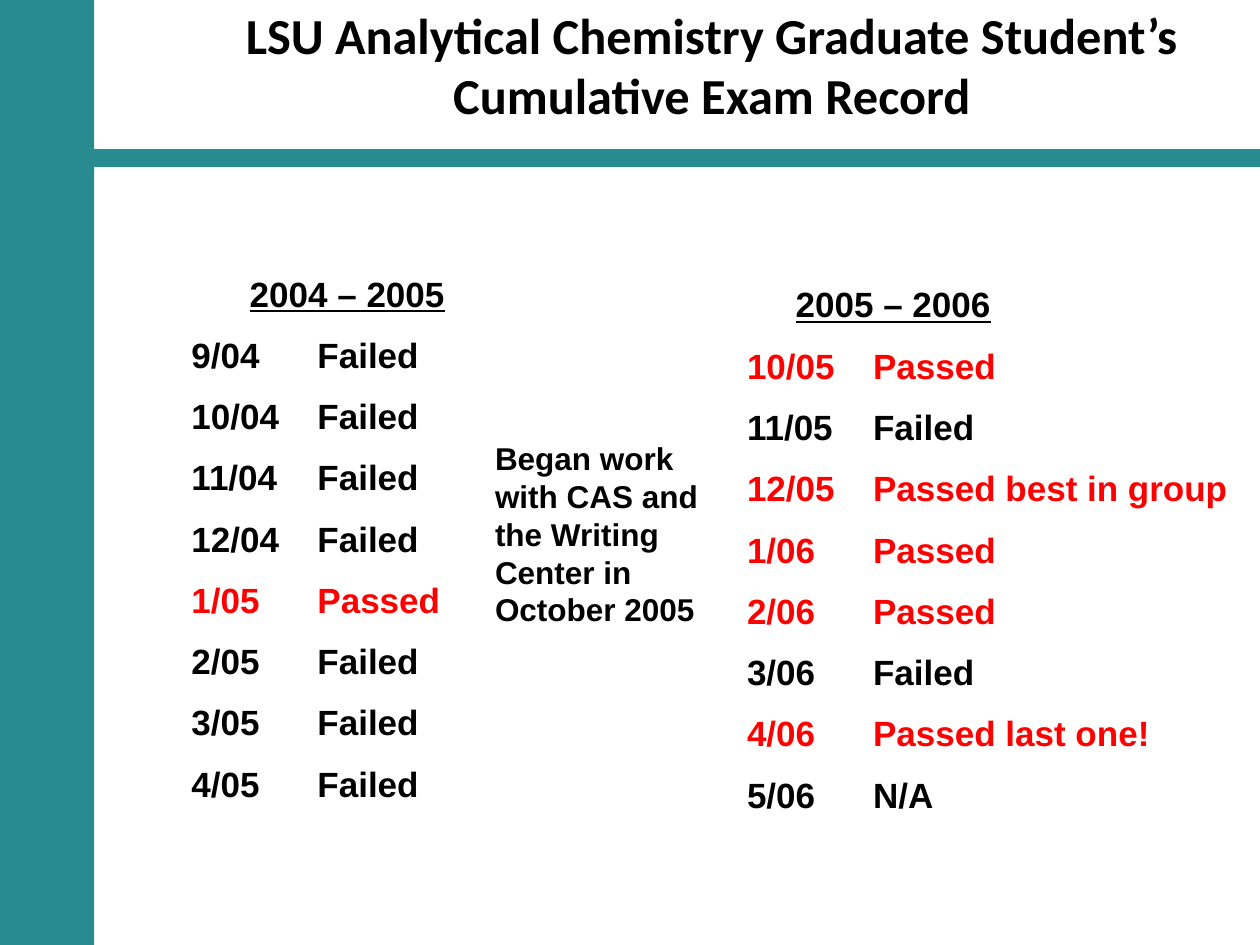
from dataclasses import dataclass
from typing import Optional

from lxml.etree import SubElement
from pptx import Presentation
from pptx.dml.color import RGBColor
from pptx.enum.shapes import MSO_CONNECTOR, MSO_SHAPE
from pptx.enum.text import MSO_ANCHOR, MSO_AUTO_SIZE, PP_ALIGN
from pptx.oxml.ns import qn
from pptx.util import Cm, Pt

TEAL, BLACK, RED = "288B90", "000000", "FF0000"
SLIDE_WIDTH, SLIDE_HEIGHT = Cm(25.4), Cm(19.05)


@dataclass
class Box:
    left: float
    top: float
    width: float
    height: float

    def lengths(self) -> tuple:
        return Cm(self.left), Cm(self.top), Cm(self.width), Cm(self.height)


@dataclass
class ExamYear:
    box: Box
    heading: str
    results: list[tuple[str, str]]
    heading_indent: Optional[float] = None  # centred when not given


EXAM_YEARS = [
    ExamYear(Box(3.61, 5.36, 6.78, 12.52), "2004 – 2005", [
        ("9/04", "Failed"), ("10/04", "Failed"), ("11/04", "Failed"),
        ("12/04", "Failed"), ("1/05", "Passed"), ("2/05", "Failed"),
        ("3/05", "Failed"), ("4/05", "Failed"),
    ]),
    ExamYear(Box(14.81, 5.58, 10.59, 12.52), "2005 – 2006", [
        ("10/05", "Passed"), ("11/05", "Failed"),
        ("12/05", "Passed best in group"), ("1/06", "Passed"),
        ("2/06", "Passed"), ("3/06", "Failed"),
        ("4/06", "Passed last one!"), ("5/06", "N/A"),
    ], heading_indent=0.98),
]


def color(value: str) -> RGBColor:
    return RGBColor.from_string(value)


def add_run(paragraph, text: str, size: float, font_name: str = "Arial",
            font_color: str = BLACK, underline: bool = False) -> None:
    run = paragraph.add_run()
    run.text = text
    font = run.font
    font.name, font.size, font.bold = font_name, Pt(size), True
    font.underline = underline
    font.color.rgb = color(font_color)


def add_text_frame(slide, box: Box):
    text_frame = slide.shapes.add_textbox(*box.lengths()).text_frame
    text_frame.word_wrap = True
    return text_frame


def add_tab_stop(paragraph, position: float) -> None:
    tab_list = SubElement(paragraph._p.get_or_add_pPr(), qn("a:tabLst"))
    SubElement(tab_list, qn("a:tab"), pos=str(Cm(position)), algn="l")


def add_title(slide, text: str) -> None:
    title = slide.shapes.title
    title.left, title.top, title.width, title.height = Box(3.56, 0.08, 21.59, 3.61).lengths()
    text_frame = title.text_frame
    text_frame.auto_size = MSO_AUTO_SIZE.NONE
    text_frame.vertical_anchor = MSO_ANCHOR.TOP
    text_frame.margin_top = 0
    paragraph = text_frame.paragraphs[0]
    paragraph.alignment = PP_ALIGN.CENTER
    add_run(paragraph, text, 28.8, "Calibri")


def add_exam_year(slide, year: ExamYear) -> None:
    text_frame = add_text_frame(slide, year.box)
    heading = text_frame.paragraphs[0]
    if year.heading_indent is None:
        heading.alignment = PP_ALIGN.CENTER
    else:
        heading._p.get_or_add_pPr().set("marL", str(Cm(year.heading_indent)))
    add_run(heading, year.heading, 20, underline=True)
    for date, result in year.results:
        paragraph = text_frame.add_paragraph()
        paragraph.space_before = Pt(11)
        add_tab_stop(paragraph, 2.54)
        result_color = RED if result.startswith("Passed") else BLACK
        add_run(paragraph, f"{date}\t{result}", 20, font_color=result_color)


def add_frame(slide) -> None:
    """Draw the rule under the title and the bar down the left side."""
    rule = slide.shapes.add_connector(MSO_CONNECTOR.STRAIGHT, 0, Cm(3.18), SLIDE_WIDTH, Cm(3.18))
    rule.line.color.rgb = color(TEAL)
    rule.line.width = Pt(10)
    SubElement(rule._element.spPr, qn("a:effectLst"))
    bar = slide.shapes.add_shape(MSO_SHAPE.RECTANGLE, 0, 0, Cm(1.9), SLIDE_HEIGHT)
    bar.shadow.inherit = False
    bar.fill.solid()
    bar.fill.fore_color.rgb = color(TEAL)
    bar.line.fill.background()


def main() -> None:
    presentation = Presentation()
    presentation.slide_width, presentation.slide_height = SLIDE_WIDTH, SLIDE_HEIGHT
    slide = presentation.slides.add_slide(presentation.slide_layouts.get_by_name("Title Only"))
    add_title(slide, "LSU Analytical Chemistry Graduate Student’s Cumulative Exam Record")
    for year in EXAM_YEARS:
        add_exam_year(slide, year)
    note = add_text_frame(slide, Box(9.73, 8.73, 4.66, 4.11))
    add_run(note.paragraphs[0], "Began work with CAS and the Writing Center in October 2005", 18)
    add_frame(slide)
    presentation.save("out.pptx")


if __name__ == "__main__":
    main()
